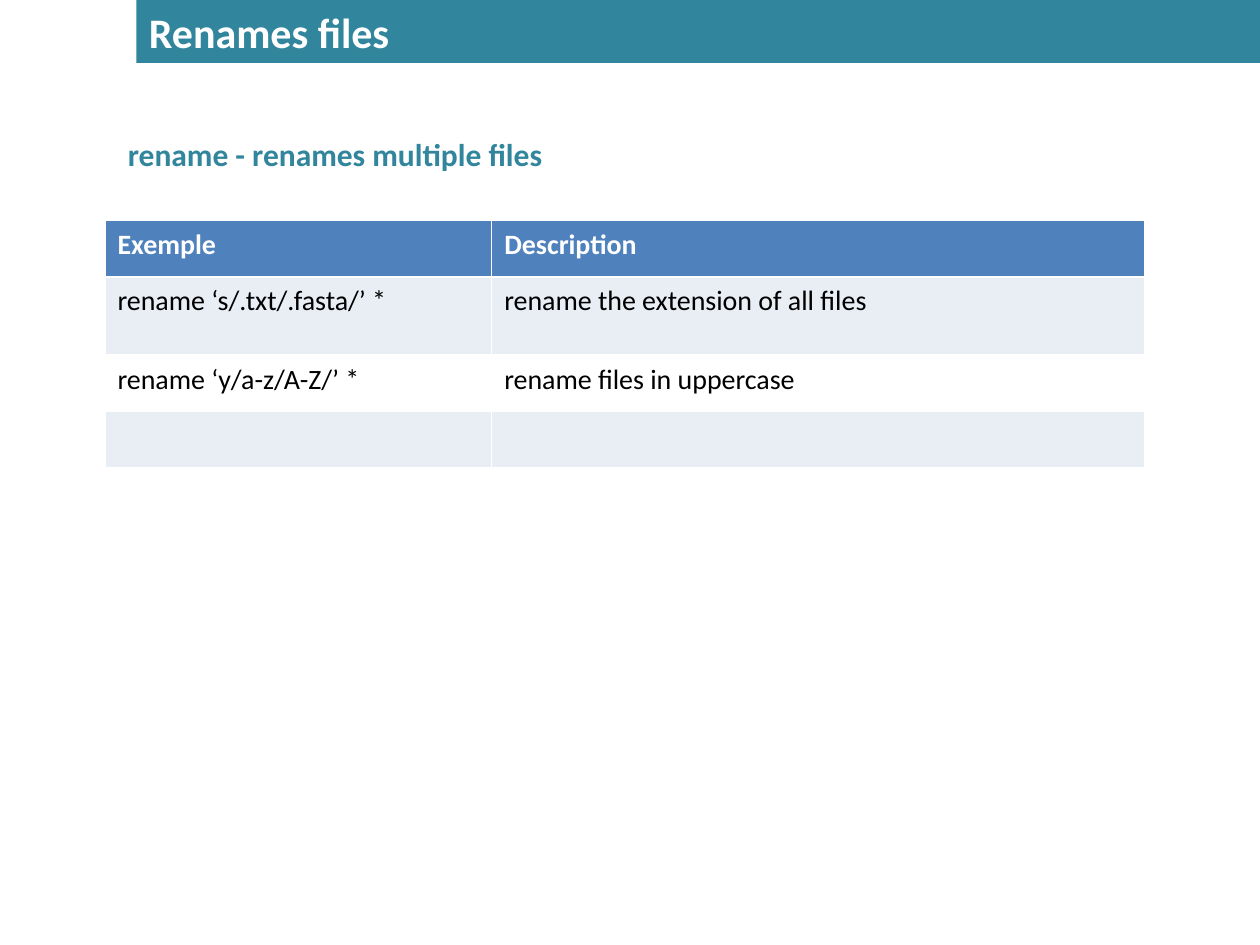
from dataclasses import dataclass

from pptx import Presentation
from pptx import util as u
from pptx.dml.color import RGBColor
from pptx.enum import shapes, text

Pt = u.Pt


@dataclass(frozen=True)
class Theme:
    font: str = "Calibri"
    teal: str = "31859C"
    header: str = "4F81BD"
    band: str = "E9EDF4"
    white: str = "FFFFFF"
    ink: str = "000000"
    title_size: int = 24
    subtitle_size: int = 18
    table_size: int = 16


def write(frame, words, *, font, size, color, bold=False, spacing=None):
    """Put one left-aligned paragraph into a text frame."""
    paragraph = frame.paragraphs[0]
    paragraph.alignment = text.PP_ALIGN.LEFT
    if spacing:
        paragraph.line_spacing = spacing
    run = paragraph.add_run()
    run.text = words
    run.font.name = font
    run.font.size = Pt(size)
    run.font.bold = bold
    run.font.color.rgb = RGBColor.from_string(color)


def paint(fill, color):
    fill.solid()
    fill.fore_color.rgb = RGBColor.from_string(color)


class SlideBuilder:
    def __init__(self, slide, theme):
        self.slide = slide
        self.theme = theme

    def title_bar(self, words, left, top, width, height):
        theme = self.theme
        bar = self.slide.shapes.add_shape(
            shapes.MSO_SHAPE.RECTANGLE, Pt(left), Pt(top), Pt(width), Pt(height))
        bar.shadow.inherit = False
        paint(bar.fill, theme.teal)
        bar.line.fill.background()
        bar.text_frame.word_wrap = True
        bar.text_frame.vertical_anchor = text.MSO_ANCHOR.TOP
        write(bar.text_frame, words, font=theme.font, size=theme.title_size,
              color=theme.white, bold=True)

    def subtitle(self, words, left, top, width, height):
        theme = self.theme
        box = self.slide.shapes.add_textbox(Pt(left), Pt(top), Pt(width), Pt(height))
        box.text_frame.word_wrap = True
        write(box.text_frame, words, font=theme.font, size=theme.subtitle_size,
              color=theme.teal, bold=True)

    def table(self, rows, left, top, widths, heights):
        theme = self.theme
        grid = self.slide.shapes.add_table(
            len(rows), len(widths), Pt(left), Pt(top),
            Pt(sum(widths)), Pt(sum(heights))).table
        for column, width in zip(grid.columns, widths):
            column.width = Pt(width)
        for index, (row, height, entries) in enumerate(zip(grid.rows, heights, rows)):
            row.height = Pt(height)
            is_header = index == 0
            banded = theme.band if index % 2 else theme.white
            for cell, words in zip(row.cells, entries):
                paint(cell.fill, theme.header if is_header else banded)
                cell.margin_left = cell.margin_right = Pt(7.2)
                cell.margin_top, cell.margin_bottom = Pt(5), Pt(3.6)
                if words:
                    write(cell.text_frame, words, font=theme.font,
                          size=theme.table_size, spacing=0.93, bold=is_header,
                          color=theme.white if is_header else theme.ink)


def main():
    deck = Presentation()
    deck.slide_width, deck.slide_height = Pt(720), Pt(540)
    builder = SlideBuilder(deck.slides.add_slide(deck.slide_layouts[6]), Theme())

    # Command summary
    builder.subtitle("rename - renames multiple files", 66, 73.5, 445, 29)

    # Usage examples, with two empty rows at the end
    examples = [
        ("Exemple", "Description"),
        ("rename ‘s/.txt/.fasta/’ *", "rename the extension of all files"),
        ("rename ‘y/a-z/A-Z/’ *", "rename files in uppercase"),
        ("", ""),
        ("", ""),
    ]
    builder.table(examples, 60, 126, widths=(221, 373),
                  heights=(32.2, 44.6, 32.2, 32.2, 46))

    # Title bar, running to the right edge
    builder.title_bar("Renames files", 78, 0, 642, 36)

    deck.save("out.pptx")


if __name__ == "__main__":
    main()
